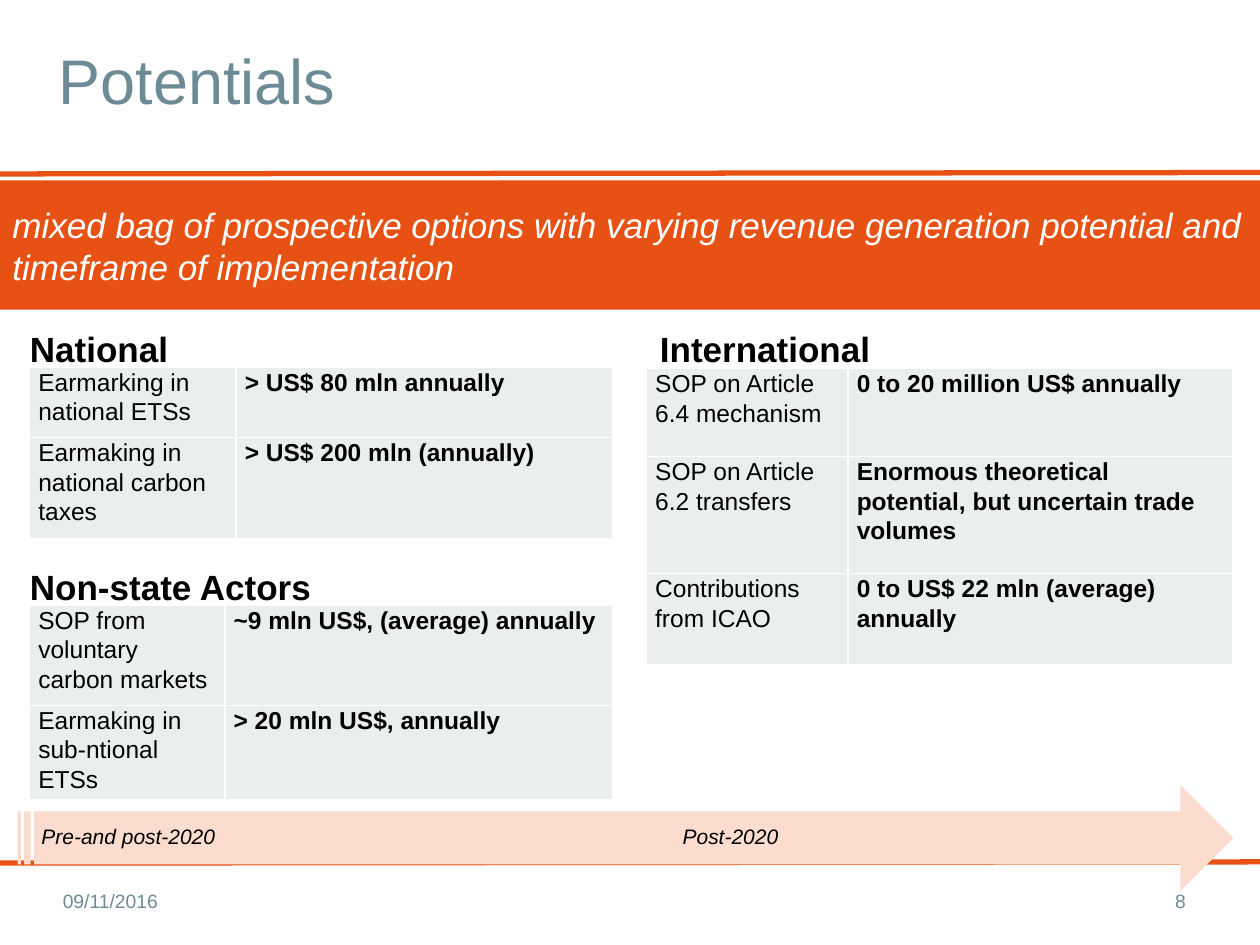
from lxml.etree import SubElement
from pptx import Presentation
from pptx.dml.color import RGBColor
from pptx.enum.shapes import MSO_CONNECTOR, MSO_SHAPE
from pptx.enum.text import MSO_ANCHOR as Anchor, PP_ALIGN as Align
from pptx.oxml.ns import qn
from pptx.util import Pt

COLORS = {"orange": "E75113", "peach": "FBDCCF", "slate": "6D8B95",
          "cell": "EBEEEF", "white": "FFFFFF", "black": "000000"}

RULES = [(99.4, 98.6), (493.2, 492.5)]
BANNER = ("mixed bag of prospective options with varying revenue generation "
          "potential and timeframe of implementation")
FOOTER = [("09/11/2016", 28.8, 182.9, Align.LEFT),
          ("8", 508.3, 176.4, Align.RIGHT)]
TIMELINE = [("Pre-and post-2020", 16.6), ("Post-2020", 383)]
GROUPS = [
    {"heading": "International", "heading_at": (370, 182.2),
     "table_at": (369.4, 210.6), "columns": (115.2, 219.6),
     "rows": [
         (50.3, "SOP on Article 6.4 mechanism", "0 to 20 million US$ annually"),
         (66.9, "SOP on Article 6.2 transfers",
          "Enormous theoretical potential, but uncertain trade volumes"),
         (52, "Contributions from ICAO", "0 to US$ 22 mln (average) annually")]},
    {"heading": "National", "heading_at": (10, 182.2),
     "table_at": (16.9, 209.9), "columns": (118, 215.3),
     "rows": [
         (40.2, "Earmarking in national ETSs", "> US$ 80 mln annually"),
         (57.7, "Earmaking in national carbon taxes", "> US$ 200 mln (annually)")]},
    {"heading": "Non-state Actors", "heading_at": (10, 318.2),
     "table_at": (16.9, 345.9), "columns": (111.6, 221.7),
     "rows": [
         (57.2, "SOP from voluntary carbon markets", "~9 mln US$, (average) annually"),
         (50.4, "Earmaking in sub-ntional ETSs", "> 20 mln US$, annually")]},
]


def color(name):
    return RGBColor.from_string(COLORS[name])


def write(frame, text, size, ink="black", bold=False, italic=False,
          align=Align.LEFT, anchor=Anchor.TOP, spacing=1.0):
    frame.word_wrap = True
    frame.vertical_anchor = anchor
    line = frame.paragraphs[0]
    line.alignment = align
    line.line_spacing = spacing
    run = line.add_run()
    run.text = text
    font = run.font
    font.name, font.size = "Arial", Pt(size)
    font.bold, font.italic = bold, italic
    font.color.rgb = color(ink)


def label(slide, text, left, top, width, height, size, **style):
    box = slide.shapes.add_textbox(Pt(left), Pt(top), Pt(width), Pt(height))
    write(box.text_frame, text, size, **style)


def block(slide, preset, left, top, width, height, fill):
    shape = slide.shapes.add_shape(preset, Pt(left), Pt(top), Pt(width), Pt(height))
    shape.shadow.inherit = False
    shape.fill.solid()
    shape.fill.fore_color.rgb = color(fill)
    shape.line.fill.background()
    return shape


def rule(slide, start, end):
    line = slide.shapes.add_connector(MSO_CONNECTOR.STRAIGHT, 0, Pt(start), Pt(720), Pt(end))
    line.line.color.rgb = color("orange")
    line.line.width = Pt(3)
    SubElement(line._element.spPr, qn("a:effectLst"))


def border(cell):
    props = cell._tc.get_or_add_tcPr()
    for side in ("a:lnL", "a:lnR", "a:lnT", "a:lnB"):
        edge = SubElement(props, qn(side), w=str(Pt(1)))
        SubElement(SubElement(edge, qn("a:solidFill")), qn("a:srgbClr"), val=COLORS["white"])


def options_table(slide, group):
    rows, columns = group["rows"], group["columns"]
    left, top = group["table_at"]
    table = slide.shapes.add_table(len(rows), len(columns), Pt(left), Pt(top), Pt(sum(columns)),
                                   Pt(sum(row[0] for row in rows))).table
    table.first_row = table.horz_banding = False
    for column, width in zip(table.columns, columns):
        column.width = Pt(width)
    for r, (height, *texts) in enumerate(rows):
        table.rows[r].height = Pt(height)
        for c, text in enumerate(texts):
            cell = table.cell(r, c)
            cell.margin_left = cell.margin_right = Pt(5)
            cell.margin_top = cell.margin_bottom = 0
            border(cell)
            cell.fill.solid()
            cell.fill.fore_color.rgb = color("cell")
            write(cell.text_frame, text, 14, bold=c == 1, spacing=1.07)


def main():
    deck = Presentation()
    deck.slide_width, deck.slide_height = Pt(720), Pt(540)
    slide = deck.slides.add_slide(deck.slide_layouts[6])

    for start, end in RULES:
        rule(slide, start, end)
    block(slide, MSO_SHAPE.STRIPED_RIGHT_ARROW, 10, 448.6, 694.8, 60.5, "peach")
    label(slide, "Potentials", 26.6, 3.6, 560.9, 89.3, 36, ink="slate",
          anchor=Anchor.MIDDLE, spacing=0.9)
    for text, left, width, align in FOOTER:
        label(slide, text, left, 500.4, width, 28.8, 11, ink="slate",
              align=align, anchor=Anchor.MIDDLE)
    for group in GROUPS:
        options_table(slide, group)
    banner = block(slide, MSO_SHAPE.RECTANGLE, 0, 103, 720, 74, "orange")
    write(banner.text_frame, BANNER, 20, ink="white", italic=True, anchor=Anchor.MIDDLE)
    for group in GROUPS:
        label(slide, group["heading"], *group["heading_at"], 251.3, 23.8, 20,
              bold=True, spacing=1.07)
    for text, left in TIMELINE:
        label(slide, text, left, 465.8, 251.3, 23.8, 12, italic=True, spacing=1.07)
    deck.save("out.pptx")


if __name__ == "__main__":
    main()
